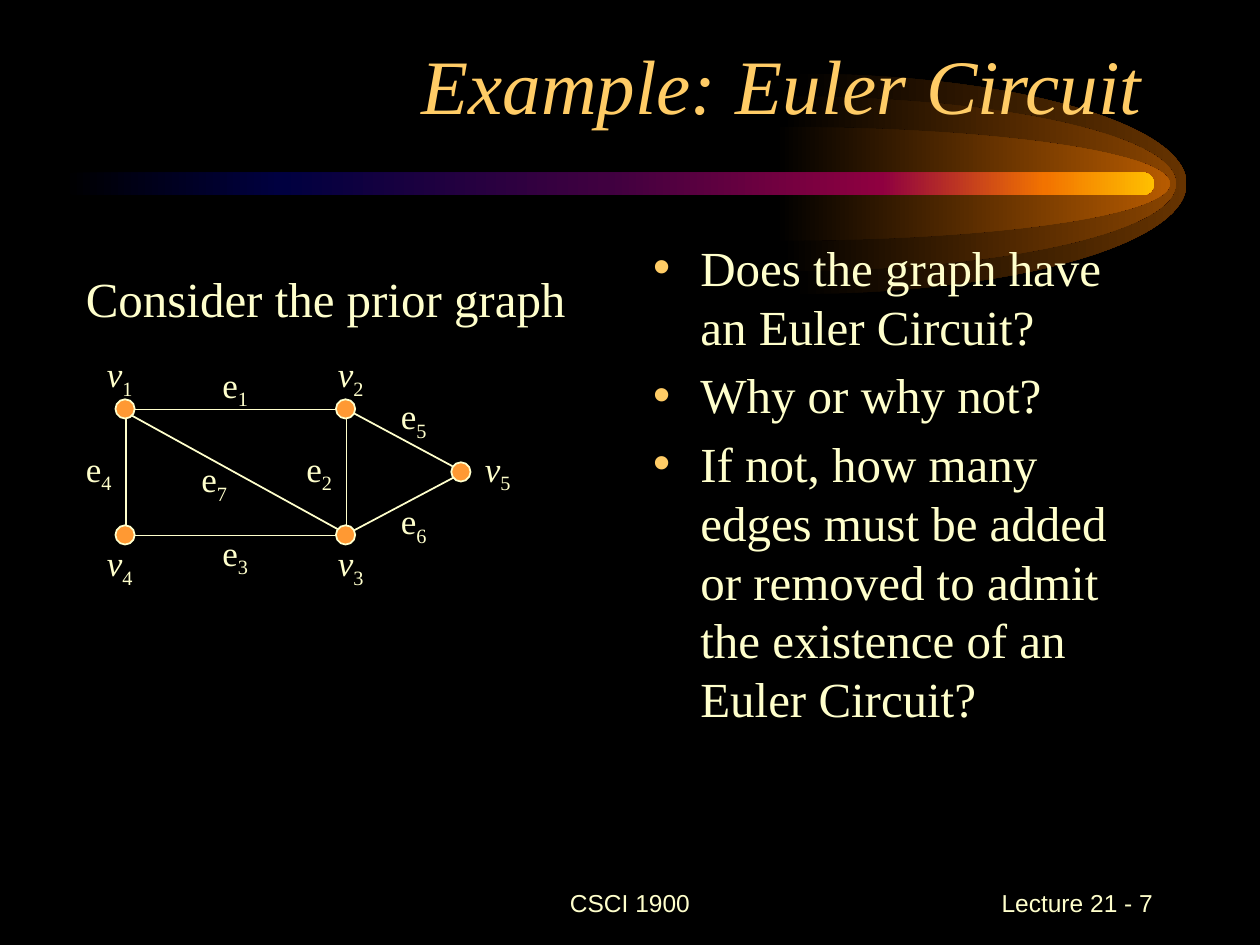
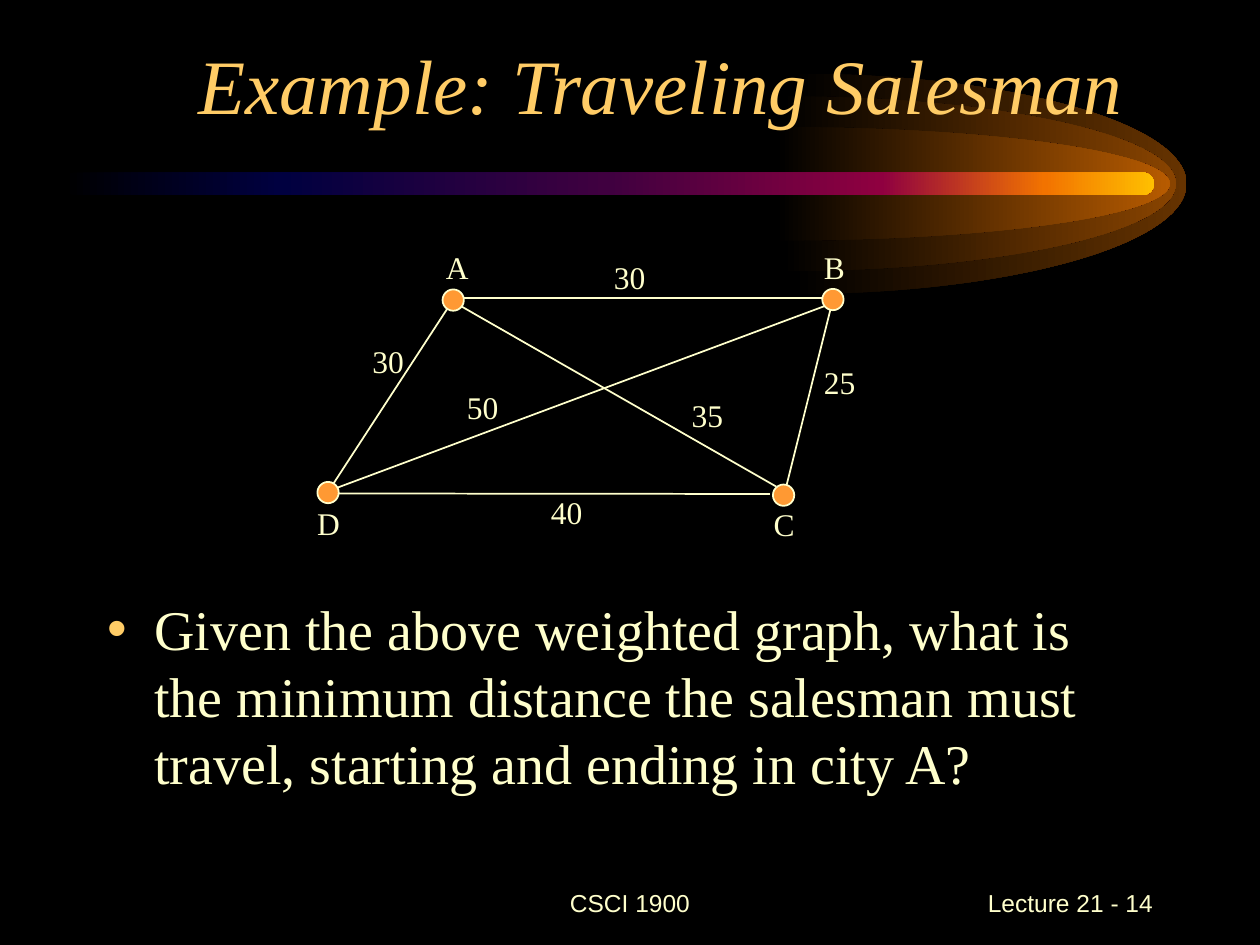
from lxml.etree import SubElement
from pptx import Presentation
from pptx.dml.color import RGBColor
from pptx.enum.shapes import MSO_CONNECTOR as CONN, MSO_SHAPE as SHAPE
from pptx.enum.text import MSO_ANCHOR as ANCHOR, MSO_AUTO_SIZE as AUTO, PP_ALIGN as ALIGN
from pptx.oxml.ns import qn
from pptx.util import Pt

# Shared style
BLACK, CREAM, GOLD, ORANGE = "000000", "FFFFCC", "FFCC66", "FF9933"
SERIF, SANS = "Times New Roman", "Arial"
rgb = RGBColor.from_string

# Comet behind the title: centre x, vertical radius and end colour of each glow
GLOWS = [(453, 63, "663300"), (447, 50, "894400"), (443.5, 32.5, "B75B00")]
GLOW_Y, GLOW_RADIUS = 105, 225
ARC = 0.55  # handle length of a quarter ellipse
TAIL = [(0, BLACK), (20, "000040"), (50, "400040"), (75, "8F0040"),
        (90, "F27300"), (100, "FFBF00")]

# Nodes are centres, edges are x1, y1, x2, y2, labels are x, y, text, subscript
SLIDES = [
    dict(title="Example: Euler Circuit", number=7,
         body=(366, 132, 300, 354), body_size=28,
         bullets=["Does the graph have an Euler Circuit?",
                  "Why or why not?",
                  "If not, how many edges must be added or removed to admit "
                  "the existence of an Euler Circuit?"],
         frame=(72, 234, 126, 72),
         edges=[(202.3, 236.2, 258.5, 266.4), (202.3, 303.1, 259.2, 272.9),
                (75.6, 237.6, 193, 302.4)],
         nodes=[(71.5, 233.7), (197.5, 233.7), (197.5, 305.7), (71.5, 305.7),
                (263.4, 269.7)],
         node_size=11, label_size=20, label_width=36,
         labels=[(54, 198, "v", "1"), (186, 198, "v", "2"), (186, 306, "v", "3"),
                 (54, 306, "v", "4"), (270, 252, "v", "5"),
                 (120, 204, "e", "1"), (168, 252, "e", "2"), (120, 300, "e", "3"),
                 (42, 252, "e", "4"), (222, 222, "e", "5"), (222, 282, "e", "6"),
                 (108, 258, "e", "7")],
         caption="Consider the prior graph"),
    dict(title="Example: Traveling Salesman ", number=14,
         body=(54, 336, 612, 150), body_size=32,
         bullets=["Given the above weighted graph, what is the minimum distance the "
                  "salesman must travel, starting and ending in city A?"],
         frame=None,
         edges=[(257, 170.2, 469.5, 170.2), (193.5, 282, 440, 282.3),
                (255.6, 176.4, 190, 277.2), (474.5, 177, 449.3, 278),
                (263.5, 175, 443.5, 278), (193, 278.6, 471, 175)],
         nodes=[(259, 171.5), (476, 171.2), (447.8, 283), (187.5, 281.5)],
         node_size=12.2, label_size=18, label_width=36,
         labels=[(247.7, 138, "A", ""), (463.7, 138, "B", ""), (435, 285.3, "C", ""),
                 (174.2, 284.5, "D", ""), (343.7, 144, "30", ""), (205.7, 192, "30", ""),
                 (463.7, 204, "25", ""), (307.7, 278, "40", ""), (259.7, 218, "50", ""),
                 (388.2, 223, "35", "")],
         caption=None),
]


def style_runs(p, size, color=CREAM, font=SERIF, italic=False):
    for r in p.runs:
        r.font.size, r.font.name, r.font.italic = Pt(size), font, italic
        r.font.color.rgb = rgb(color)


def add_text(shapes, box, text, size, font=SERIF, align=ALIGN.LEFT, anchor=ANCHOR.TOP):
    tf = shapes.add_textbox(*map(Pt, box)).text_frame
    tf.word_wrap, tf.vertical_anchor = True, anchor
    p = tf.paragraphs[0]
    p.text, p.alignment = text, align
    style_runs(p, size, font=font)
    return p


prs = Presentation()
prs.slide_width, prs.slide_height = Pt(720), Pt(540)
master = prs.slide_master
master.background.fill.solid()
master.background.fill.fore_color.rgb = rgb(BLACK)
slides = [prs.slides.add_slide(prs.slide_layouts[1]) for _ in SLIDES]

# Comet: three half-ellipse glows and the tail, grouped
group = slides[0].shapes.add_group_shape()
comet = []
for cx, ry, color in GLOWS:
    rx = GLOW_RADIUS
    builder = group.shapes.build_freeform(Pt(cx), Pt(GLOW_Y - ry), scale=1.0)
    builder.add_line_segments([(Pt(cx + rx), Pt(GLOW_Y)), (Pt(cx), Pt(GLOW_Y + ry))])
    glow = builder.convert_to_shape()
    quarters = [[(ARC * rx, 0), (rx, ry * (1 - ARC)), (rx, ry)],
                [(rx, ry * (1 + ARC)), (ARC * rx, 2 * ry), (0, 2 * ry)]]
    for segment, points in zip(list(glow.element.iter(qn("a:lnTo"))), quarters):
        segment.clear()
        segment.tag = qn("a:cubicBezTo")
        for x, y in points:
            SubElement(segment, qn("a:pt"), x=str(Pt(x)), y=str(Pt(y)))
    comet.append((glow, [(0, BLACK), (100, color)]))
tail = group.shapes.add_shape(SHAPE.ROUNDED_RECTANGLE, Pt(36), Pt(98.5), Pt(623.5), Pt(13))
tail.adjustments[0] = 0.5
comet.append((tail, TAIL))
for shape, stops in comet:
    shape.shadow.inherit = False
    shape.line.fill.background()
    shape.fill.gradient()
    shape.fill.gradient_angle = 0
    stop_list = shape.element.spPr.find(qn("a:gradFill")).find(qn("a:gsLst"))
    stop_list.clear()
    for pos, color in stops:
        gs = SubElement(stop_list, qn("a:gs"), pos=str(pos * 1000))
        SubElement(gs, qn("a:srgbClr"), val=color)

# The comet belongs to the master, behind its placeholders, with ids of its own
for number, item in enumerate(group.element.iter(qn("p:cNvPr")), 100):
    item.set("id", str(number))
master.placeholders[0].element.addprevious(group.element)

for s, data in zip(slides, SLIDES):
    # Footers
    add_text(s.shapes, (246, 498, 228, 36), "CSCI 1900", 14, SANS,
             ALIGN.CENTER, ANCHOR.MIDDLE)
    add_text(s.shapes, (516, 498, 150, 36), f"Lecture 21 - {data['number']}", 14, SANS,
             ALIGN.RIGHT, ANCHOR.MIDDLE)

    # Title and bullets
    title, body = s.placeholders[0], s.placeholders[1]
    for ph, box in ((title, (48, 18, 612, 60)), (body, data["body"])):
        ph.left, ph.top, ph.width, ph.height = map(Pt, box)
        ph.text_frame.auto_size = AUTO.NONE
    title.text_frame.text = data["title"]
    title.text_frame.vertical_anchor = ANCHOR.BOTTOM
    p = title.text_frame.paragraphs[0]
    p.alignment = ALIGN.RIGHT
    style_runs(p, 44, GOLD, italic=True)
    body.text_frame.text = "\n".join(data["bullets"])
    for p in body.text_frame.paragraphs:
        style_runs(p, data["body_size"])
        bullet_color = SubElement(p._p.get_or_add_pPr(), qn("a:buClr"))
        SubElement(bullet_color, qn("a:srgbClr"), val=GOLD)

    # Graph edges
    graph = s.shapes.add_group_shape().shapes
    if data["frame"]:
        frame = graph.add_shape(SHAPE.RECTANGLE, *map(Pt, data["frame"]))
        frame.shadow.inherit = False
        frame.fill.background()
        frame.line.color.rgb, frame.line.width = rgb(CREAM), Pt(1)
    for ends in data["edges"]:
        edge = graph.add_connector(CONN.STRAIGHT, *map(Pt, ends))
        edge.line.color.rgb, edge.line.width = rgb(CREAM), Pt(1)
        SubElement(edge.element.spPr, qn("a:effectLst"))

    # Graph nodes
    d = data["node_size"]
    for x, y in data["nodes"]:
        node = graph.add_shape(SHAPE.OVAL, Pt(x - d / 2), Pt(y - d / 2), Pt(d), Pt(d))
        node.shadow.inherit = False
        node.fill.solid()
        node.fill.fore_color.rgb = rgb(ORANGE)
        node.line.color.rgb, node.line.width = rgb(CREAM), Pt(1)

    # Labels
    size = data["label_size"]
    for x, y, name, index in data["labels"]:
        p = add_text(graph, (x, y, data["label_width"], 30), name, size)
        if index:
            p.add_run().text = index
            style_runs(p, size)
            p.runs[0].font.italic = name == "v"
            p.runs[1].font._element.set("baseline", "-25000")
    if data["caption"]:
        add_text(graph, (42, 150, 294, 41), data["caption"], 28)

prs.save("out.pptx")
